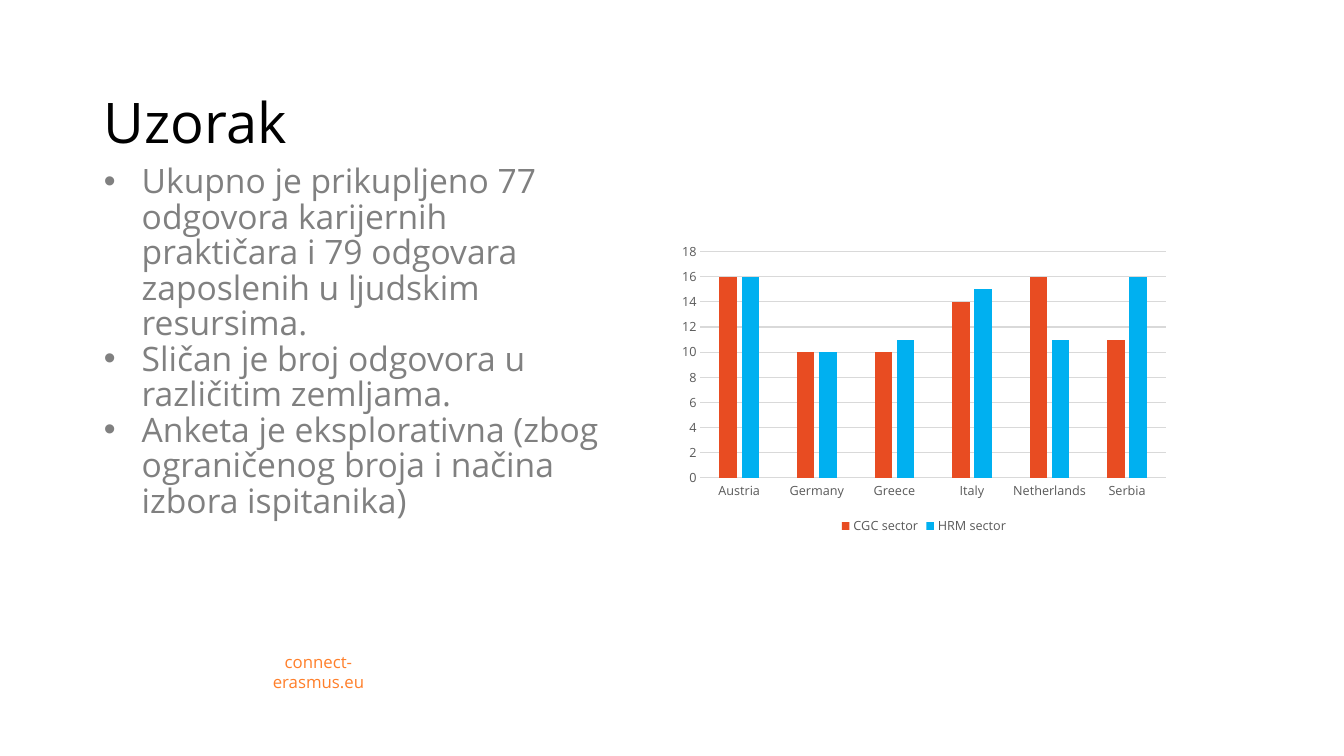
from lxml.etree import SubElement
from pptx import Presentation
from pptx.chart.data import CategoryChartData
from pptx.dml.color import RGBColor
from pptx.enum.chart import XL_CHART_TYPE, XL_LEGEND_POSITION, XL_TICK_MARK
from pptx.enum.text import MSO_ANCHOR, MSO_AUTO_SIZE, PP_ALIGN
from pptx.oxml.ns import qn
from pptx.util import Pt


def color(hex_value):
    return RGBColor.from_string(hex_value)


def style_font(font, size, hex_value):
    for name, value in {"name": "Open Sans", "size": Pt(size), "bold": False}.items():
        setattr(font, name, value)
    font.color.rgb = color(hex_value)


deck = Presentation()
deck.slide_width, deck.slide_height = Pt(960), Pt(540)
page = deck.slides.add_slide(deck.slide_layouts[1])
title, body = page.placeholders
footer = page.shapes.add_textbox(0, 0, 0, 0)

# Text boxes: position, anchor, alignment, line spacing, font and wording
text_parts = [
    (title, (67, 60.5, 334, 54), MSO_ANCHOR.BOTTOM, PP_ALIGN.LEFT, 0.9, 40, "000000",
     ["Uzorak"]),
    (body, (67, 114.5, 376.5, 337), MSO_ANCHOR.TOP, PP_ALIGN.LEFT, 0.88, 24, "808080",
     ["Ukupno je prikupljeno 77 odgovora karijernih praktičara i 79 odgovara "
      "zaposlenih u ljudskim resursima.",
      "Sličan je broj odgovora u različitim zemljama.",
      "Anketa je eksplorativna (zbog ograničenog broja i načina izbora ispitanika)"]),
    (footer, (164, 469, 127, 21.5), MSO_ANCHOR.MIDDLE, PP_ALIGN.CENTER, 1.0, 12, "FF7F2A",
     ["connect-erasmus.eu"]),
]
for box, place, anchor, alignment, spacing, size, hex_value, lines in text_parts:
    for name, value in zip(("left", "top", "width", "height"), place):
        setattr(box, name, Pt(value))
    frame = box.text_frame
    frame.text = "\n".join(lines)
    frame.word_wrap = True
    frame.auto_size = MSO_AUTO_SIZE.NONE
    frame.vertical_anchor = anchor
    for para in frame.paragraphs:
        settings = {"alignment": alignment, "line_spacing": spacing,
                    "space_before": Pt(0), "space_after": Pt(0)}
        for name, value in settings.items():
            setattr(para, name, value)
        for span in para.runs:
            style_font(span.font, size, hex_value)

# Bullets with a hanging indent
for para in body.text_frame.paragraphs:
    properties = para._p.get_or_add_pPr()
    properties.set("marL", str(Pt(27)))
    properties.set("indent", str(-Pt(27)))
    SubElement(properties, qn("a:buFont"), typeface="Arial")
    SubElement(properties, qn("a:buChar"), char="•")

# Chart of answers by country and sector
sectors = [
    ("CGC sector", (16, 10, 10, 14, 16, 11), "E84C22"),
    ("HRM sector", (16, 10, 11, 15, 11, 16), "00B0F0"),
]
answers = CategoryChartData()
answers.categories = ["Austria", "Germany", "Greece", "Italy", "Netherlands", "Serbia"]
for name, values, _ in sectors:
    answers.add_series(name, values)
chart = page.shapes.add_chart(XL_CHART_TYPE.COLUMN_CLUSTERED, Pt(480), Pt(169),
                              Pt(360), Pt(216), answers).chart
style_font(chart.font, 10, "000000")
chart.has_title = False
chart.has_legend = True
chart.legend.position = XL_LEGEND_POSITION.BOTTOM
chart.legend.include_in_layout = False
style_font(chart.legend.font, 9, "595959")

plot = chart.plots[0]
for name, value in {"gap_width": 219, "overlap": -27, "vary_by_categories": False}.items():
    setattr(plot, name, value)
for series, (_, _, hex_value) in zip(plot.series, sectors):
    series.format.fill.solid()
    series.format.fill.fore_color.rgb = color(hex_value)

# Axes and gridlines
countries, counts = chart.category_axis, chart.value_axis
for axis in (countries, counts):
    axis.major_tick_mark = axis.minor_tick_mark = XL_TICK_MARK.NONE
    style_font(axis.tick_labels.font, 9, "595959")
for line in (countries.format.line, counts.major_gridlines.format.line):
    line.color.rgb = color("D9D9D9")
    line.width = Pt(0.75)
counts.format.line.fill.background()
for name, value in {"minimum_scale": 0, "maximum_scale": 18, "major_unit": 2}.items():
    setattr(counts, name, value)

deck.save("out.pptx")
